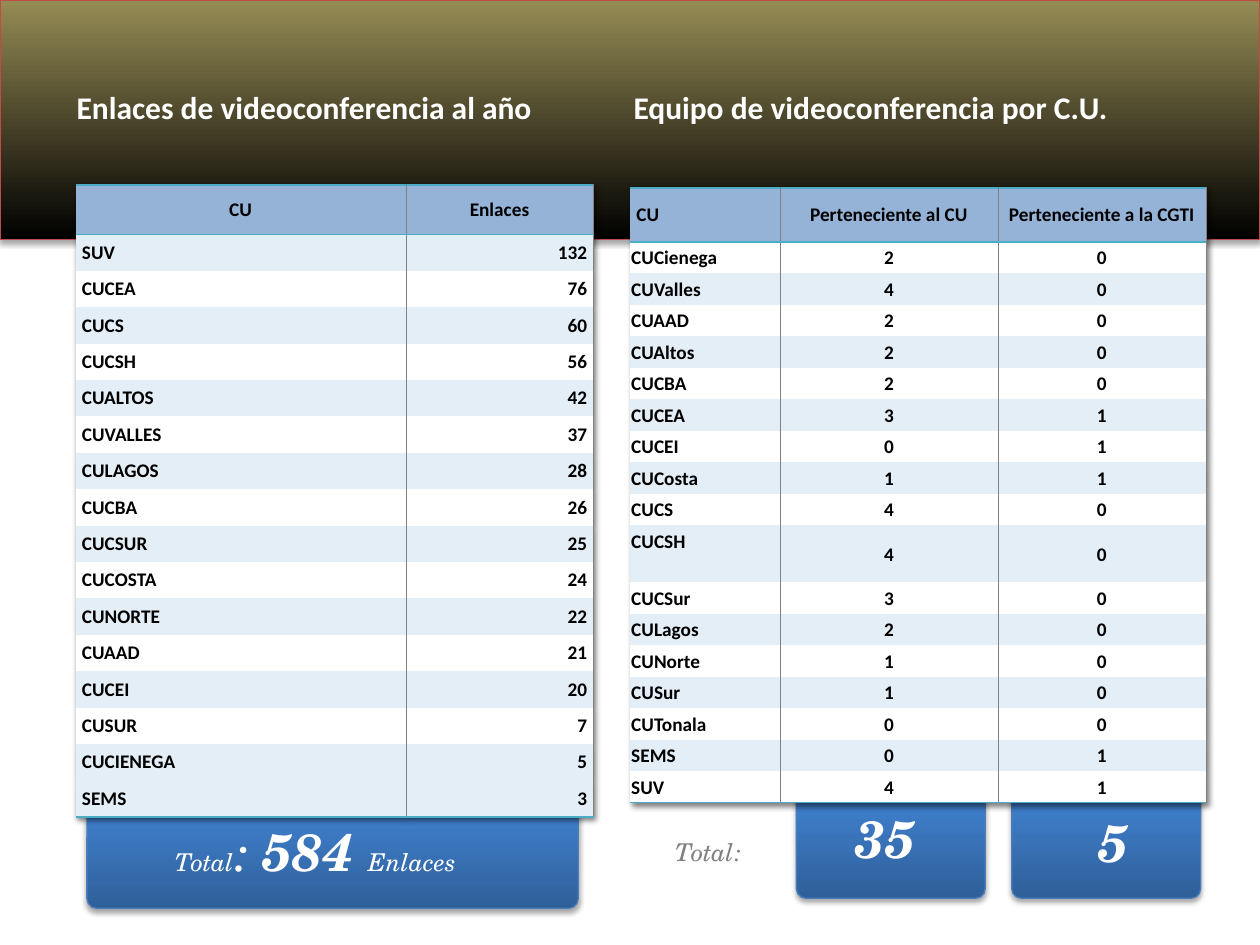
"""Build the slide on videoconference links and equipment per university centre."""
from dataclasses import dataclass

from lxml import etree
from pptx import Presentation
from pptx import util as u
from pptx.dml.color import RGBColor
from pptx.enum import shapes, text
from pptx.oxml import ns, parse_xml

WHITE = RGBColor(0xFF, 0xFF, 0xFF)
BLACK = RGBColor(0x00, 0x00, 0x00)
GREY = RGBColor(0x80, 0x80, 0x80)
TEAL = RGBColor(0x4B, 0xAC, 0xC6)
HEADER_BLUE = RGBColor(0x95, 0xB3, 0xD7)
BAND_BLUE = RGBColor(0xE4, 0xEE, 0xF7)
BOX_LINE = RGBColor(0x4B, 0x7E, 0xBC)
BANNER_LINE = RGBColor(0xBF, 0x4C, 0x48)
BOX_STOPS = (
    (0, RGBColor(0x2F, 0x5F, 0x99)),
    (80, RGBColor(0x3D, 0x7C, 0xC7)),
    (100, RGBColor(0x3A, 0x7C, 0xCB)),
)
BANNER_STOPS = ((0, BLACK), (99, RGBColor(0x94, 0x8A, 0x54)))

LEFT, CENTER, RIGHT = text.PP_ALIGN.LEFT, text.PP_ALIGN.CENTER, text.PP_ALIGN.RIGHT
TABLE_FONT = {"name": "Calibri", "size": u.Pt(11), "bold": True}
HEADING_FONT = {"name": "Calibri", "size": u.Pt(18), "bold": True}
LABEL_FONT = {"name": "TeX Gyre Schola", "size": u.Pt(14), "italic": True}
COLON_FONT = LABEL_FONT | {"size": u.Pt(30)}
NUMBER_FONT = COLON_FONT | {"bold": True}
NO_STYLE = "{2D5ABB26-0587-4C30-8999-92F81FD0307C}"


@dataclass
class Panel:
    box: tuple
    preset: shapes.MSO_SHAPE
    stops: tuple
    line: RGBColor


@dataclass
class Label:
    box: tuple
    runs: tuple
    color: RGBColor = WHITE
    heading: bool = False


@dataclass
class Grid:
    box: tuple
    columns: tuple
    heights: list
    rows: list
    header_aligns: tuple
    aligns: tuple
    header_margins: tuple
    margins: tuple
    banded: set


def set_values(target, values: dict) -> None:
    for name, value in values.items():
        setattr(target, name, value)


def shadow_xml(blur: float, distance: float, angle: int, alpha: int):
    return parse_xml(
        f'<a:effectLst {ns.nsdecls("a")}><a:outerShdw blurRad="{u.Pt(blur)}" '
        f'dist="{u.Pt(distance)}" dir="{angle * 60000}" rotWithShape="0">'
        f'<a:srgbClr val="000000"><a:alpha val="{alpha * 1000}"/></a:srgbClr>'
        "</a:outerShdw></a:effectLst>"
    )


def draw_panel(slide, panel: Panel) -> None:
    shape = slide.shapes.add_shape(panel.preset, *map(u.Inches, panel.box))
    if panel.preset == shapes.MSO_SHAPE.ROUNDED_RECTANGLE:
        shape.adjustments[0] = 0.09
    shape.fill.gradient()
    shape.fill.gradient_angle = 90
    stop_list = shape._element.spPr.find(".//" + ns.qn("a:gsLst"))
    for stop in list(stop_list):
        stop_list.remove(stop)
    for position, color in panel.stops:
        stop = etree.SubElement(stop_list, ns.qn("a:gs"), pos=str(position * 1000))
        etree.SubElement(stop, ns.qn("a:srgbClr"), val=str(color))
    shape.line.color.rgb = panel.line
    shape.line.width = u.Pt(0.75)
    shape._element.spPr.append(shadow_xml(3.1, 1.8, 90, 35))


def draw_label(slide, label: Label) -> None:
    frame = slide.shapes.add_textbox(*map(u.Inches, label.box)).text_frame
    frame.word_wrap = label.heading
    if label.heading:
        frame.vertical_anchor = text.MSO_ANCHOR.MIDDLE
    else:
        frame.auto_size = text.MSO_AUTO_SIZE.SHAPE_TO_FIT_TEXT
    for words, font in label.runs:
        run = frame.paragraphs[0].add_run()
        run.text = words
        set_values(run.font, font)
        run.font.color.rgb = label.color
        if label.heading:
            fill = run._r.rPr.find(ns.qn("a:solidFill"))
            fill.addnext(shadow_xml(3, 3, 45, 60))


def draw_borders(cell, borders: dict) -> None:
    properties = cell._tc.get_or_add_tcPr()
    lines = [
        parse_xml(
            f'<a:{side} {ns.nsdecls("a")} w="{u.Pt(width)}"><a:solidFill>'
            f'<a:srgbClr val="{color}"/></a:solidFill></a:{side}>'
        )
        for side, (color, width) in borders.items()
    ]
    for line in reversed(lines):
        properties.insert(0, line)


def draw_grid(slide, grid: Grid) -> None:
    last_row, last_column = len(grid.rows) - 1, len(grid.columns) - 1
    table = slide.shapes.add_table(
        last_row + 1, last_column + 1, *map(u.Inches, grid.box)
    ).table
    table.first_row = table.horz_banding = False
    properties = table._tbl.tblPr
    properties.find(ns.qn("a:tableStyleId")).text = NO_STYLE
    properties.insert(0, shadow_xml(3.1, 1.8, 45, 50))
    for column, width in zip(table.columns, grid.columns):
        column.width = u.Inches(width)
    for row_index, values in enumerate(grid.rows):
        header = row_index == 0
        table.rows[row_index].height = u.Inches(grid.heights[row_index])
        aligns = grid.header_aligns if header else grid.aligns
        margins = grid.header_margins if header else grid.margins
        for column_index, value in enumerate(values):
            cell = table.cell(row_index, column_index)
            cell.vertical_anchor = text.MSO_ANCHOR.MIDDLE
            sides = ("margin_left", "margin_top", "margin_right", "margin_bottom")
            set_values(cell, dict(zip(sides, map(u.Inches, margins))))
            if grid.heights[row_index] == TALL_ROW and column_index == 0:
                cell.vertical_anchor = text.MSO_ANCHOR.TOP
                cell.margin_top = u.Inches(0.04)
            paragraph = cell.text_frame.paragraphs[0]
            paragraph.alignment = aligns[column_index]
            run = paragraph.add_run()
            run.text = str(value)
            set_values(run.font, TABLE_FONT)
            run.font.color.rgb = BLACK
            cell.fill.solid()
            band = BAND_BLUE if row_index in grid.banded else WHITE
            cell.fill.fore_color.rgb = HEADER_BLUE if header else band
            borders = {"lnL": (GREY, 0.25)} if column_index else {}
            borders["lnR"] = (GREY, 0.25)
            if header:
                borders["lnT"] = (TEAL, 1)
            if row_index in (0, last_row):
                borders["lnB"] = (TEAL, 1)
            draw_borders(cell, borders)


TALL_ROW = 0.45
LINK_ROWS = [
    ("CU", "Enlaces"), ("SUV", 132), ("CUCEA", 76), ("CUCS", 60), ("CUCSH", 56),
    ("CUALTOS", 42), ("CUVALLES", 37), ("CULAGOS", 28), ("CUCBA", 26),
    ("CUCSUR", 25), ("CUCOSTA", 24), ("CUNORTE", 22), ("CUAAD", 21),
    ("CUCEI", 20), ("CUSUR", 7), ("CUCIENEGA", 5), ("SEMS", 3),
]
EQUIPMENT_ROWS = [
    ("CU", "Perteneciente al CU", "Perteneciente a la CGTI"),
    ("CUCienega", 2, 0), ("CUValles", 4, 0), ("CUAAD", 2, 0), ("CUAltos", 2, 0),
    ("CUCBA", 2, 0), ("CUCEA", 3, 1), ("CUCEI", 0, 1), ("CUCosta", 1, 1),
    ("CUCS", 4, 0), ("CUCSH", 4, 0), ("CUCSur", 3, 0), ("CULagos", 2, 0),
    ("CUNorte", 1, 0), ("CUSur", 1, 0), ("CUTonala", 0, 0), ("SEMS", 0, 1),
    ("SUV", 4, 1),
]
LINKS = Grid(
    (0.6, 1.47, 4.11, 4.93), (2.62, 1.49), [0.39] + [0.27] * 16, LINK_ROWS,
    (CENTER, CENTER), (LEFT, RIGHT), (0.05,) * 4, (0.05,) * 4,
    {*range(1, 17, 2), 16},
)
EQUIPMENT = Grid(
    (5, 1.49, 4.57, 4.91), (1.19, 1.73, 1.65),
    [0.43] + [0.25] * 9 + [TALL_ROW] + [0.25] * 7, EQUIPMENT_ROWS,
    (LEFT, CENTER, CENTER), (LEFT, CENTER, CENTER),
    (0.05, 0, 0.05, 0), (0.01, 0.01, 0.01, 0), set(range(2, 18, 2)),
)
TOTAL_BOXES = ((6.32, 6.27, 1.5, 0.86), (8.03, 6.27, 1.5, 0.86), (0.69, 6.35, 3.9, 0.86))
PANELS = [
    Panel(box, shapes.MSO_SHAPE.ROUNDED_RECTANGLE, BOX_STOPS, BOX_LINE)
    for box in TOTAL_BOXES
] + [Panel((0, 0, 10, 1.9), shapes.MSO_SHAPE.RECTANGLE, BANNER_STOPS, BANNER_LINE)]
LINKS_TOTAL = (
    ("Total", LABEL_FONT), (": ", COLON_FONT), ("584 ", NUMBER_FONT),
    ("Enlaces", LABEL_FONT), (" ", LABEL_FONT | {"size": u.Pt(24)}),
)
LABELS = [
    Label((6.69, 6.35, 0.83, 0.61), (("35", NUMBER_FONT),)),
    Label((4.93, 0.47, 4.64, 0.75),
          (("Equipo de videoconferencia por C.U.", HEADING_FONT),), heading=True),
    Label((0.51, 0.47, 4.1, 0.75),
          (("Enlaces de videoconferencia al año", HEADING_FONT),), heading=True),
    Label((1.29, 6.45, 2.64, 0.61), LINKS_TOTAL),
    Label((8.62, 6.38, 0.57, 0.61), (("5", NUMBER_FONT),)),
    Label((5.26, 6.59, 0.79, 0.34), (("Total:", LABEL_FONT),), GREY),
]


def main() -> None:
    presentation = Presentation()
    presentation.slide_width, presentation.slide_height = u.Inches(10), u.Inches(7.5)
    slide = presentation.slides.add_slide(presentation.slide_layouts[6])
    for draw, items in (
        (draw_panel, PANELS), (draw_grid, (LINKS, EQUIPMENT)), (draw_label, LABELS)
    ):
        for item in items:
            draw(slide, item)
    presentation.save("out.pptx")


if __name__ == "__main__":
    main()
